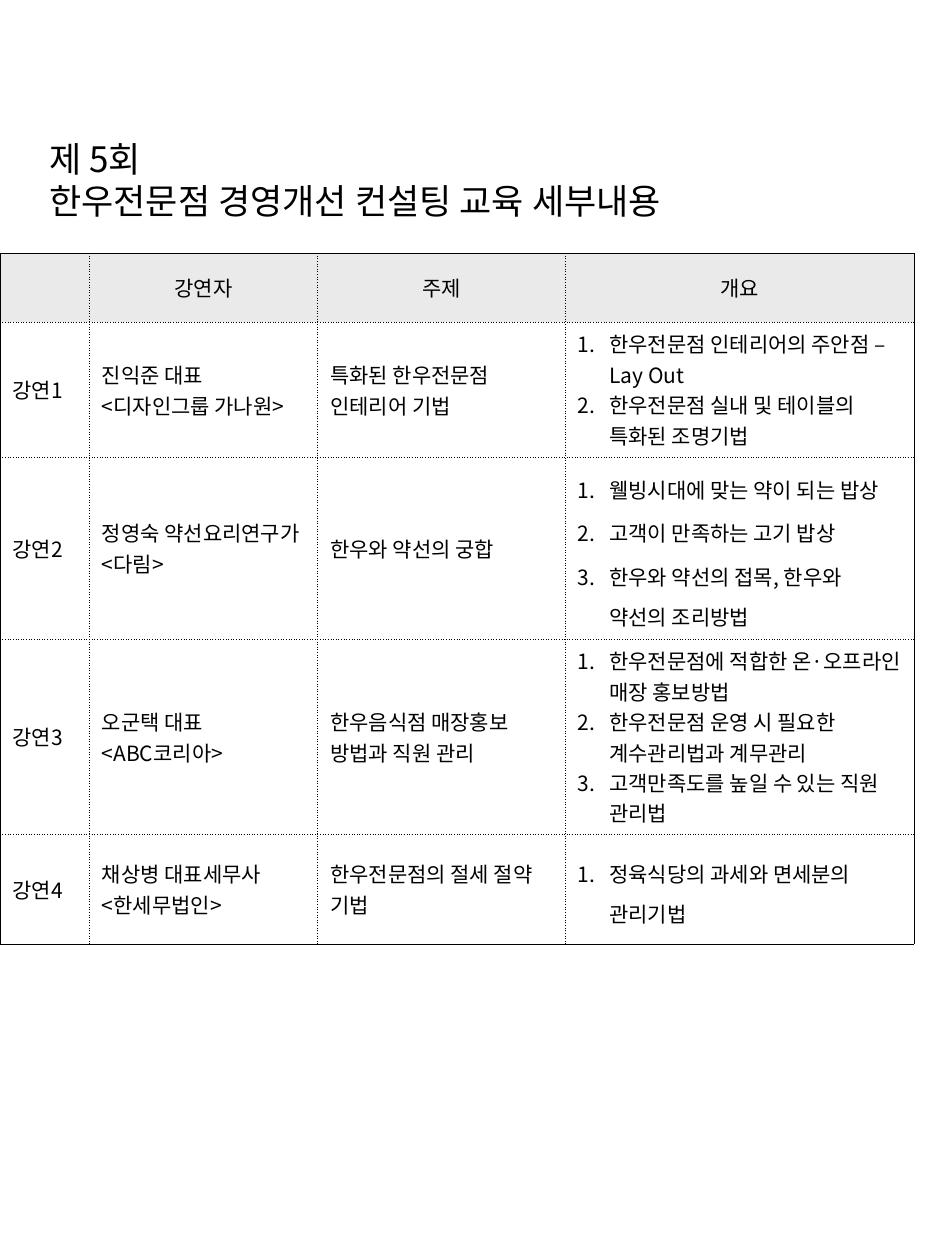
from pptx import Presentation
from pptx.dml.color import RGBColor
from pptx.enum.text import MSO_ANCHOR, PP_ALIGN
from pptx.oxml import parse_xml
from pptx.oxml.ns import nsdecls
from pptx.util import Pt


def color(code):
    return RGBColor.from_string(code)


class Sheet:
    """Holds the style and the current slide of the lecture programme."""

    font = "Noto Sans CJK KR"
    ink = "000000"
    header_fill = "EAEAEA"
    line_width = 0.25
    indent = 18

    def __init__(self, slide):
        self.slide = slide

    def style(self, paragraph, size):
        paragraph.font.size = Pt(size)
        paragraph.font.name = self.font
        paragraph.font.color.rgb = color(self.ink)
        paragraph.font._element.append(
            parse_xml(f'<a:ea {nsdecls("a")} typeface="{self.font}"/>'))

    def number(self, paragraph):
        properties = paragraph._p.get_or_add_pPr()
        properties.set("marL", str(Pt(self.indent)))
        properties.set("indent", str(Pt(-self.indent)))
        properties.append(parse_xml(
            f'<a:buFont {nsdecls("a")} typeface="+mj-lt"/>'))
        properties.append(parse_xml(
            f'<a:buAutoNum {nsdecls("a")} type="arabicPeriod"/>'))

    def border(self, cell, side, dash):
        cell._tc.get_or_add_tcPr().append(parse_xml(
            f'<a:ln{side} {nsdecls("a")} w="{Pt(self.line_width)}">'
            f'<a:solidFill><a:srgbClr val="{self.ink}"/></a:solidFill>'
            f'<a:prstDash val="{dash}"/></a:ln{side}>'))

    def title(self, text, left, top, width, height):
        box = self.slide.shapes.add_textbox(Pt(left), Pt(top), Pt(width), Pt(height))
        frame = box.text_frame
        frame.word_wrap = True
        frame.vertical_anchor = MSO_ANCHOR.MIDDLE
        frame.paragraphs[0].text = text
        self.style(frame.paragraphs[0], 20)

    def cell(self, cell, lines, header, numbered, loose):
        cell.vertical_anchor = MSO_ANCHOR.MIDDLE
        frame = cell.text_frame
        frame.text = "\n".join(lines)
        for paragraph in frame.paragraphs:
            if header:
                paragraph.alignment = PP_ALIGN.CENTER
            if numbered:
                self.number(paragraph)
            if loose:
                paragraph.line_spacing = 1.3
                paragraph.space_before = Pt(2.4)
            self.style(paragraph, 12)

    def table(self, rows, loose_rows, left, top, widths, heights):
        last_row, last_column = len(rows) - 1, len(widths) - 1
        table = self.slide.shapes.add_table(
            len(rows), len(widths), Pt(left), Pt(top),
            Pt(sum(widths)), Pt(sum(heights))).table
        table.first_row = table.horz_banding = False
        for column, width in zip(table.columns, widths):
            column.width = Pt(width)
        for r, (lecture, height) in enumerate(zip(rows, heights)):
            table.rows[r].height = Pt(height)
            for c, lines in enumerate(lecture):
                cell = table.cell(r, c)
                numbered = r > 0 and c == last_column
                loose = numbered and r in loose_rows
                self.cell(cell, lines, r == 0, numbered, loose)
                if numbered and not loose:
                    cell.vertical_anchor = MSO_ANCHOR.TOP
                outer = {"L": c == 0, "R": c == last_column,
                         "T": r == 0, "B": r == last_row}
                for side, is_outer in outer.items():
                    self.border(cell, side, "solid" if is_outer else "sysDot")
                if r == 0:
                    cell.fill.solid()
                    cell.fill.fore_color.rgb = color(self.header_fill)
                else:
                    cell.fill.background()


def main():
    presentation = Presentation()
    presentation.slide_width, presentation.slide_height = Pt(540), Pt(720)
    sheet = Sheet(presentation.slides.add_slide(presentation.slide_layouts[6]))
    programme = [
        [[], ["강연자"], ["주제"], ["개요"]],
        [["강연1"], ["진익준 대표", "<디자인그룹 가나원>"],
         ["특화된 한우전문점 인테리어 기법"],
         ["한우전문점 인테리어의 주안점 – Lay Out",
          "한우전문점 실내 및 테이블의 특화된 조명기법"]],
        [["강연2"], ["정영숙 약선요리연구가", "<다림>"],
         ["한우와 약선의 궁합"],
         ["웰빙시대에 맞는 약이 되는 밥상",
          "고객이 만족하는 고기 밥상",
          "한우와 약선의 접목, 한우와 약선의 조리방법"]],
        [["강연3"], ["오군택 대표", "<ABC코리아>"],
         ["한우음식점 매장홍보 방법과 직원 관리"],
         ["한우전문점에 적합한 온·오프라인 매장 홍보방법",
          "한우전문점 운영 시 필요한 계수관리법과 계무관리",
          "고객만족도를 높일 수 있는 직원 관리법"]],
        [["강연4"], ["채상병 대표세무사", "<한세무법인>"],
         ["한우전문점의 절세 절약 기법"],
         ["정육식당의 과세와 면세분의 관리기법"]],
    ]
    sheet.table(programme, loose_rows=(2, 4), left=0, top=144.7,
                widths=[51, 130.5, 141.5, 199.5],
                heights=[39.5, 77, 104, 111, 62.5])
    sheet.title("제 5회\n한우전문점 경영개선 컨설팅 교육 세부내용", 21, 42.5, 499, 120)
    presentation.save("out.pptx")


if __name__ == "__main__":
    main()
